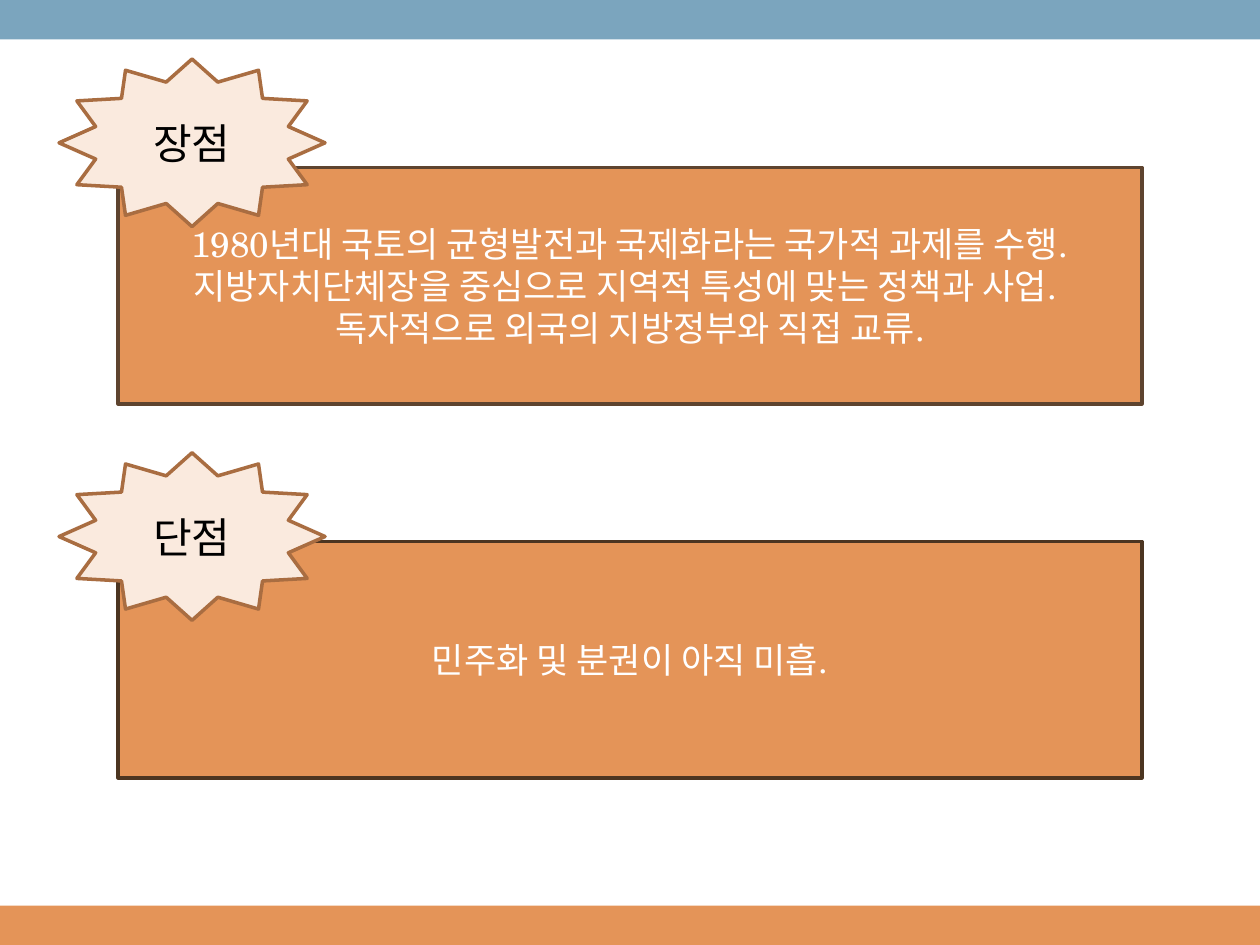
from dataclasses import dataclass

from pptx import Presentation
from pptx.dml.color import RGBColor
from pptx.enum.shapes import MSO_SHAPE as Preset
from pptx.enum.text import MSO_ANCHOR as Anchor, PP_ALIGN as Align
from pptx.util import Pt


@dataclass(frozen=True)
class Theme:
    font: str = "TeX Gyre Schola"
    blue: str = "7BA5BE"
    orange: str = "E49458"
    cream: str = "FAEADE"
    badge_line: str = "A96D41"
    pros_line: str = "5E442F"
    cons_line: str = "4C3521"
    light_text: str = "FFFFFF"
    dark_text: str = "000000"
    body_size: float = 20
    badge_size: float = 24
    line_width: float = 2


THEME = Theme()
WIDTH, HEIGHT = 720, 540
BAND_HEIGHT = 22.5


def add_block(slide, preset, box, fill, line=None):
    """Place a flat preset shape in box (left, top, width, height)."""
    block = slide.shapes.add_shape(preset, *(Pt(length) for length in box))
    block.shadow.inherit = False
    block.fill.solid()
    block.fill.fore_color.rgb = RGBColor.from_string(fill)
    if line:
        block.line.color.rgb = RGBColor.from_string(line)
        block.line.width = Pt(THEME.line_width)
    else:
        block.line.fill.background()
    return block


def write_lines(block, lines, size, color):
    frame = block.text_frame
    frame.word_wrap = True
    frame.vertical_anchor = Anchor.MIDDLE
    for index, line in enumerate(lines):
        paragraph = frame.add_paragraph() if index else frame.paragraphs[0]
        paragraph.alignment = Align.CENTER
        run = paragraph.add_run()
        run.text = line
        run.font.name = THEME.font
        run.font.size = Pt(size)
        run.font.color.rgb = RGBColor.from_string(color)


def add_bands(slide, width, height):
    """Coloured bands along the bottom and top edges."""
    for top, color in ((height - BAND_HEIGHT, THEME.orange), (0, THEME.blue)):
        add_block(slide, Preset.RECTANGLE, (0, top, width, BAND_HEIGHT), color)


def add_panel(slide, box, badge_rise, title, lines, outline):
    """Text panel with a star badge over its top left corner."""
    left, top, _, _ = box
    panel = add_block(slide, Preset.RECTANGLE, box, THEME.orange, outline)
    write_lines(panel, lines, THEME.body_size, THEME.light_text)

    badge_box = (left - 33.75, top - badge_rise, 152, 95.75)
    badge = add_block(slide, Preset.STAR_12_POINT, badge_box,
                      THEME.cream, THEME.badge_line)
    write_lines(badge, [title], THEME.badge_size, THEME.dark_text)


def main():
    deck = Presentation()
    deck.slide_width, deck.slide_height = Pt(WIDTH), Pt(HEIGHT)
    slide = deck.slides.add_slide(deck.slide_layouts[6])

    add_bands(slide, WIDTH, HEIGHT)

    # Advantages
    add_panel(slide, (67.5, 95.75, 585, 135), 62, "장점", [
        "1980년대 국토의 균형발전과 국제화라는 국가적 과제를 수행.",
        "지방자치단체장을 중심으로 지역적 특성에 맞는 정책과 사업. ",
        "독자적으로 외국의 지방정부와 직접 교류.",
    ], THEME.pros_line)

    # Disadvantages
    add_panel(slide, (67.5, 309.5, 585, 135), 50.75, "단점",
              ["민주화 및 분권이 아직 미흡."], THEME.cons_line)

    deck.save("out.pptx")


if __name__ == "__main__":
    main()
